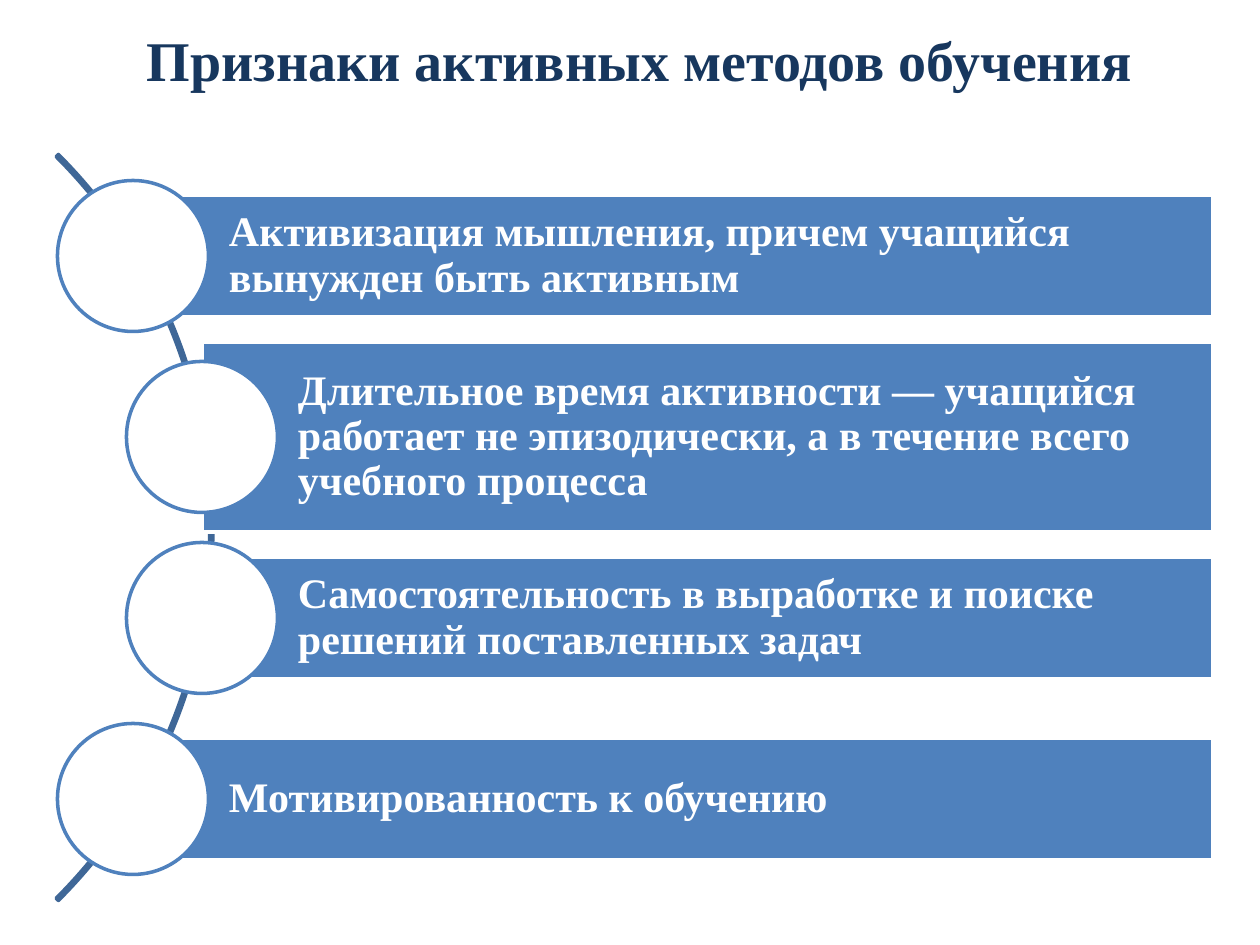
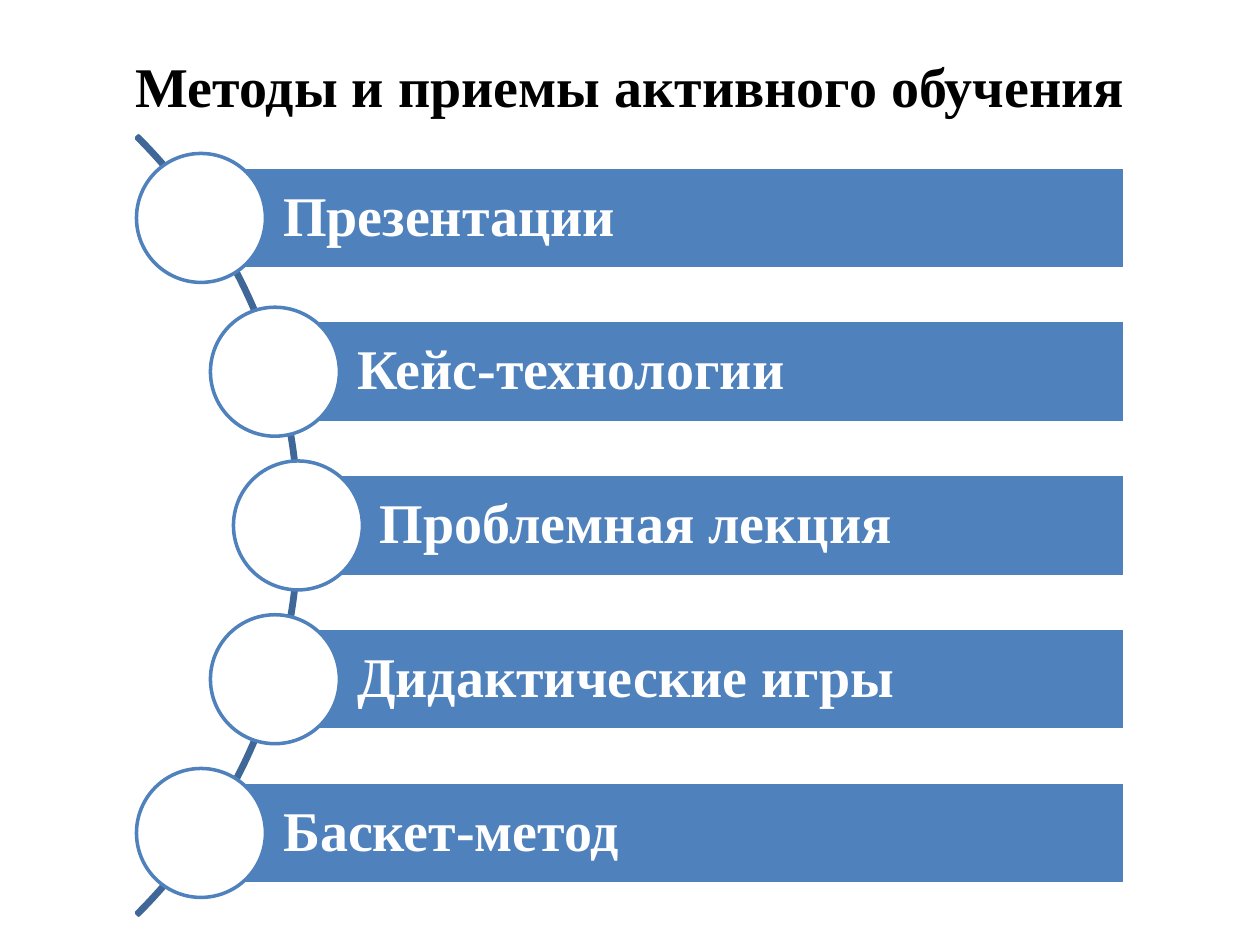
"""Builds two slides that list active learning features and methods along an arc."""
from dataclasses import dataclass

from pptx import Presentation
from pptx.dml.color import RGBColor
from pptx.enum.shapes import MSO_SHAPE as Shape
from pptx.enum.text import MSO_ANCHOR as Anchor, MSO_AUTO_SIZE as AutoSize, PP_ALIGN as Align
from pptx.util import Inches, Pt

PX = Inches(1) / 126


@dataclass(frozen=True)
class Theme:
    font: str = "Times New Roman"
    title_size: int = 32
    line_width: int = 2
    white: str = "FFFFFF"
    bar: str = "4F81BD"
    arc: str = "3F6797"


THEME = Theme()

SLIDES = [
    {
        "title": "Признаки активных методов обучения",
        "title_color": "17375E",
        "title_box": (134, 19, 1022, 81),
        "text_size": 24,
        "arc": {"right": 213, "diameter": 1055},
        "first_center": 256,
        "last_center": 799,
        "circle": 151,
        "bar_right": 1213,
        "indent": 96,
        "margin": 9,
        "items": [
            ("Активизация мышления, причем учащийся вынужден быть активным", 133, 121),
            ("Длительное время активности — учащийся работает не эпизодически, "
             "а в течение всего учебного процесса", 202, 190),
            ("Самостоятельность в выработке и поиске решений поставленных задач", 202, 121),
            ("Мотивированность к обучению", 133, 121),
        ],
    },
    {
        "title": "Методы и приемы активного обучения",
        "title_color": "000000",
        "title_box": (123, 45, 1024, 81),
        "text_size": 32,
        "arc": {"right": 300, "diameter": 1102},
        "first_center": 218,
        "last_center": 833,
        "circle": 129,
        "bar_right": 1125,
        "indent": 82,
        "margin": 11,
        "items": [
            ("Презентации", 201, 102),
            ("Кейс-технологии", 275, 102),
            ("Проблемная лекция", 298, 102),
            ("Дидактические игры", 275, 102),
            ("Баскет-метод", 201, 102),
        ],
    },
]


def px(length):
    return round(length * PX)


def write(shape, text, size, color):
    shape.text_frame.text = text
    paragraph = shape.text_frame.paragraphs[0]
    paragraph.alignment = Align.LEFT
    font = paragraph.font
    font.name, font.size, font.bold = THEME.font, Pt(size), True
    font.color.rgb = RGBColor.from_string(color)
    return paragraph


def add_outlined(slide, kind, box, line, fill=None):
    shape = slide.shapes.add_shape(kind, *map(px, box))
    shape.shadow.inherit = False
    shape.line.color.rgb = RGBColor.from_string(line)
    shape.line.width = Pt(THEME.line_width)
    if fill:
        shape.fill.solid()
        shape.fill.fore_color.rgb = RGBColor.from_string(fill)
    else:
        shape.fill.background()
    return shape


def add_title(slide, content):
    title = slide.shapes.title
    title.left, title.top, title.width, title.height = map(px, content["title_box"])
    write(title, content["title"], THEME.title_size, content["title_color"])
    frame = title.text_frame
    frame.word_wrap = False
    frame.auto_size = AutoSize.SHAPE_TO_FIT_TEXT
    frame.vertical_anchor = Anchor.TOP


def add_arc(slide, content):
    diameter = content["arc"]["diameter"]
    middle = (content["first_center"] + content["last_center"]) / 2
    box = (content["arc"]["right"] - diameter, middle - diameter / 2, diameter, diameter)
    arc = add_outlined(slide, Shape.BLOCK_ARC, box, THEME.arc)
    for index, value in enumerate((189, 27, 0.003)):
        arc.adjustments[index] = value


def add_item(slide, content, text, center_x, center_y, height):
    box = (center_x, center_y - height / 2, content["bar_right"] - center_x, height)
    bar = add_outlined(slide, Shape.RECTANGLE, box, THEME.white, THEME.bar)
    write(bar, text, content["text_size"], THEME.white).line_spacing = 0.9
    frame = bar.text_frame
    frame.word_wrap = True
    frame.vertical_anchor = Anchor.MIDDLE
    frame.margin_left = px(content["indent"])
    frame.margin_right = frame.margin_top = frame.margin_bottom = px(content["margin"])

    size = content["circle"]
    circle_box = (center_x - size / 2, center_y - size / 2, size, size)
    add_outlined(slide, Shape.OVAL, circle_box, THEME.bar, THEME.white)


def add_slide(presentation, content):
    slide = presentation.slides.add_slide(presentation.slide_layouts.get_by_name("Title Only"))
    add_title(slide, content)
    add_arc(slide, content)
    first, items = content["first_center"], content["items"]
    pitch = (content["last_center"] - first) / (len(items) - 1)
    for index, (text, center_x, height) in enumerate(items):
        add_item(slide, content, text, center_x, first + index * pitch, height)


def main():
    presentation = Presentation()
    presentation.slide_width, presentation.slide_height = px(1260), px(945)
    for content in SLIDES:
        add_slide(presentation, content)
    presentation.save("out.pptx")


if __name__ == "__main__":
    main()
